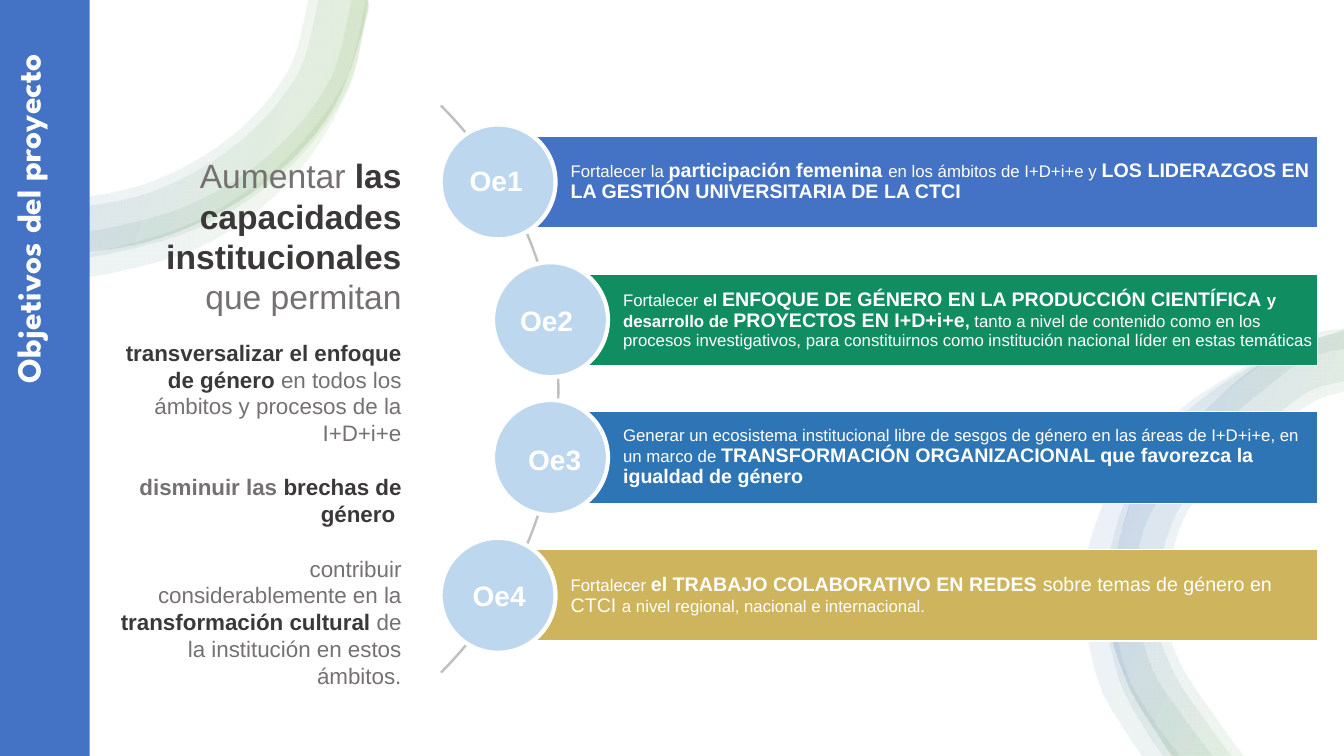
from dataclasses import dataclass

from pptx import Presentation
from pptx.dml.color import RGBColor
from pptx.enum.shapes import MSO_SHAPE
from pptx.enum.text import MSO_ANCHOR, PP_ALIGN
from pptx.oxml import parse_xml
from pptx.oxml.ns import nsdecls
from pptx.util import Inches, Pt

RECTANGLE, OVAL, BLOCK_ARC = MSO_SHAPE.RECTANGLE, MSO_SHAPE.OVAL, MSO_SHAPE.BLOCK_ARC
TOP, MIDDLE = MSO_ANCHOR.TOP, MSO_ANCHOR.MIDDLE
LEFT, RIGHT = PP_ALIGN.LEFT, PP_ALIGN.RIGHT


@dataclass(frozen=True)
class Theme:
    white: str = "FFFFFF"
    blue: str = "4472C4"
    green: str = "108D61"
    sky: str = "2E75B6"
    gold: str = "CDB45D"
    circle: str = "BDD7EE"
    arc: str = "BFBFBF"
    grey: str = "767171"
    dark: str = "3B3838"
    ribbon_green: str = "70AD47"
    body_font: str = "Arial"
    title_font: str = "League Spartan"
    title: int = 24
    lead: int = 24
    label: int = 20
    aim: int = 16
    large: int = 14
    small: int = 12


THEME = Theme()
Point = tuple[float, float]


@dataclass(frozen=True)
class Run:
    text: str
    size: int = THEME.small
    bold: bool = False
    color: str = THEME.white
    font: str = THEME.body_font


@dataclass(frozen=True)
class Paragraph:
    runs: list[Run]
    space_before: float = 0


@dataclass(frozen=True)
class Objective:
    label: str
    label_at: Point
    left: float
    color: str
    runs: list[Run]


@dataclass(frozen=True)
class Ribbon:
    outer: list[Point]
    inner: list[Point]


SMALL, LARGE, AIM = THEME.small, THEME.large, THEME.aim
GREY, DARK = THEME.grey, THEME.dark
SLIDE_WIDTH, SLIDE_HEIGHT = 13.33, 7.5
BAR_TOP, BAR_PITCH, BAR_HEIGHT, BAR_RIGHT = 1.35, 1.367, 0.91, 13.07
CIRCLE_SIZE, CIRCLE_SHIFT = 1.14, 0.57
RIBBON_ANGLE = 200

OBJECTIVES = [
    Objective("Oe1", (4.56, 1.57), 4.94, THEME.blue, [
        Run("Fortalecer la "), Run("participación femenina ", LARGE, True),
        Run("en los ámbitos de I+D+i+e y "),
        Run("LOS LIDERAZGOS EN LA GESTIÓN UNIVERSITARIA DE LA CTCI", LARGE, True)]),
    Objective("Oe2", (5.06, 2.96), 5.46, THEME.green, [
        Run("Fortalecer "), Run("el ", SMALL, True),
        Run("ENFOQUE DE GÉNERO EN LA PRODUCCIÓN CIENTÍFICA ", LARGE, True),
        Run("y desarrollo de ", SMALL, True), Run("PROYECTOS EN I+D+i+e", LARGE, True),
        Run(",", SMALL, True),
        Run(" tanto a nivel de contenido como en los procesos investigativos, para "
            "constituirnos como institución nacional líder en estas temáticas")]),
    Objective("Oe3", (5.14, 4.34), 5.46, THEME.sky, [
        Run("Generar un ecosistema institucional libre de sesgos de género en las áreas "
            "de I+D+i+e, en un marco de "),
        Run("TRANSFORMACIÓN ORGANIZACIONAL que favorezca la igualdad de género", LARGE, True)]),
    Objective("Oe4", (4.59, 5.69), 4.94, THEME.gold, [
        Run("Fortalecer "), Run("el TRABAJO COLABORATIVO EN REDES ", LARGE, True),
        Run("sobre temas de género en CTCI ", LARGE),
        Run("a nivel regional, nacional e internacional.")]),
]

AIMS = [
    Paragraph([Run("Aumentar ", THEME.lead, False, GREY),
               Run("las capacidades institucionales ", THEME.lead, True, DARK),
               Run("que permitan", THEME.lead, False, GREY)]),
    Paragraph([Run("transversalizar el enfoque de género ", AIM, True, DARK),
               Run("en todos los ámbitos y procesos de la I+D+i+e", AIM, False, GREY)], 16),
    Paragraph([Run("disminuir las ", AIM, True, GREY),
               Run("brechas de género ", AIM, True, DARK)], 19.5),
    Paragraph([Run("contribuir considerablemente en la ", AIM, False, GREY),
               Run("transformación cultural ", AIM, True, DARK),
               Run("de la institución en estos ámbitos.", AIM, False, GREY)], 19.5),
]

TOP_EDGE = [(3.64, 0), (3.63, 0.2), (3.28, 1.12), (2.57, 1.86), (1.62, 2.35), (0.56, 2.53), (0, 2.48)]
SIDE_EDGE = [(13.33, 3.3), (13.27, 3.3), (12.67, 3.52), (12.13, 3.91), (11.31, 4.78),
             (11.01, 5.98), (11.17, 6.74), (11.54, 7.37), (11.63, 7.5)]
RIBBONS = [
    Ribbon(TOP_EDGE, [(3.06, 0), (2.86, 0.7), (2.3, 1.35), (1.48, 1.81), (0.56, 1.98), (0, 1.9)]),
    Ribbon(TOP_EDGE, [(3.16, 0), (2.95, 0.74), (2.36, 1.42), (1.51, 1.9), (0.56, 2.07), (0, 2)]),
    Ribbon([(3.64, 0), (3.43, 0.9), (2.82, 1.7), (1.96, 2.26), (0.96, 2.54), (0.44, 2.55), (0, 2.49)],
           [(3.48, 0), (3.25, 0.82), (2.66, 1.54), (1.85, 2.04), (0.93, 2.29), (0.45, 2.31), (0, 2.25)]),
    Ribbon([(3.66, 0), (3.46, 0.88), (2.91, 1.76), (2.05, 2.42), (0.99, 2.73), (0.43, 2.73), (0, 2.64)],
           [(3.63, 0), (3.4, 0.85), (2.77, 1.64), (1.93, 2.2), (0.96, 2.5), (0.45, 2.53), (0, 2.47)]),
    Ribbon([(13.33, 3.26), (12.84, 3.35), (12.39, 3.61), (11.74, 4.03), (11.15, 4.6),
            (10.81, 5.37), (10.75, 6.04), (10.9, 6.78), (11.17, 7.27), (11.33, 7.5)],
           [(13.33, 3.29), (12.85, 3.39), (12.43, 3.67), (11.83, 4.16), (11.34, 4.74),
            (11.08, 5.43), (11.04, 6.03), (11.17, 6.66), (11.41, 7.1), (11.7, 7.5)]),
    Ribbon([(13.33, 3.3), (12.88, 3.38), (12.43, 3.62), (11.82, 4.04), (11.31, 4.63),
            (11.03, 5.39), (10.96, 6.02), (11.1, 6.73), (11.34, 7.2), (11.54, 7.5)],
           [(13.33, 3.46), (12.95, 3.56), (12.58, 3.83), (12.2, 4.15), (11.72, 4.64),
            (11.36, 5.22), (11.26, 5.86), (11.41, 6.58), (11.71, 7.07), (12.03, 7.5)]),
    Ribbon(SIDE_EDGE, [(13.33, 3.79), (13, 3.88), (12.63, 4.14), (12.39, 4.32), (11.69, 5.06),
                       (11.47, 5.98), (11.62, 6.62), (12.03, 7.25), (12.22, 7.5)]),
    Ribbon(SIDE_EDGE, [(13.33, 3.89), (13.05, 3.98), (12.68, 4.22), (12.44, 4.4), (11.78, 5.08),
                       (11.56, 5.98), (11.7, 6.56), (12.11, 7.19), (12.34, 7.5)]),
]


def curve_segments(points: list[Point]) -> list[tuple[Point, Point, Point]]:
    """Return the Bezier controls and end of each Catmull-Rom segment."""
    padded = [points[0], *points, points[-1]]
    return [(tuple(q + (r - p) / 6 for p, q, r in zip(a, b, c)),
             tuple(r - (s - q) / 6 for q, r, s in zip(b, c, d)), c)
            for a, b, c, d in zip(padded, padded[1:], padded[2:], padded[3:])]


def add_ribbon(slide, ribbon: Ribbon) -> None:
    inner = ribbon.inner[::-1]
    start, *others = [(Inches(x), Inches(y)) for x, y in ribbon.outer + inner]
    builder = slide.shapes.build_freeform(*start)
    builder.add_line_segments(others, close=True)
    shape = builder.convert_to_shape()
    shape.shadow.inherit = False
    shape.line.fill.background()
    shape.fill.background()
    properties = shape._element.spPr
    segments = [*curve_segments(ribbon.outer), None, *curve_segments(inner)]
    for line, segment in zip(list(properties.iter("{*}lnTo")), segments):
        if segment:
            points = "".join(f'<a:pt x="{Inches(x) - shape.left}" y="{Inches(y) - shape.top}"/>'
                             for x, y in segment)
            curve = parse_xml(f'<a:cubicBezTo {nsdecls("a")}>{points}</a:cubicBezTo>')
            line.getparent().replace(line, curve)
    colors = {2: THEME.white, 16: THEME.ribbon_green, 85: THEME.blue, 100: THEME.white}
    stops = "".join(f'<a:gs pos="{position * 1000}"><a:srgbClr val="{color}">'
                    '<a:alpha val="10000"/></a:srgbClr></a:gs>'
                    for position, color in colors.items())
    gradient = parse_xml(f'<a:gradFill {nsdecls("a")} rotWithShape="1"><a:gsLst>{stops}</a:gsLst>'
                         f'<a:lin ang="{RIBBON_ANGLE * 60000}" scaled="0"/></a:gradFill>')
    properties.replace(properties.find("{*}noFill"), gradient)


def add_filled_shape(slide, kind, box: tuple, color: str, line_width: float = 0):
    shape = slide.shapes.add_shape(kind, *map(Inches, box))
    shape.shadow.inherit = False
    shape.fill.solid()
    shape.fill.fore_color.rgb = RGBColor.from_string(color)
    if line_width:
        shape.line.color.rgb = RGBColor.from_string(THEME.white)
        shape.line.width = Pt(line_width)
    else:
        shape.line.fill.background()
    return shape


def write(shape, paragraphs: list[Paragraph], alignment=LEFT, anchor=TOP,
          margins: tuple = (0.1, 0.05, 0.1, 0.05), line_spacing: float = 1.0) -> None:
    frame = shape.text_frame
    left, top, right, bottom = map(Inches, margins)
    frame_format = {"word_wrap": True, "vertical_anchor": anchor, "margin_left": left,
                    "margin_top": top, "margin_right": right, "margin_bottom": bottom}
    for name, value in frame_format.items():
        setattr(frame, name, value)
    for index, content in enumerate(paragraphs):
        paragraph = frame.add_paragraph() if index else frame.paragraphs[0]
        paragraph.alignment = alignment
        paragraph.line_spacing = line_spacing
        if content.space_before:
            paragraph.space_before = Pt(content.space_before)
        for item in content.runs:
            run = paragraph.add_run()
            run.text = item.text
            run_format = {"name": item.font, "size": Pt(item.size), "bold": item.bold}
            for name, value in run_format.items():
                setattr(run.font, name, value)
            run.font.color.rgb = RGBColor.from_string(item.color)


def add_objective(slide, objective: Objective, top: float) -> None:
    left = objective.left
    bar = add_filled_shape(slide, RECTANGLE, (left, top, BAR_RIGHT - left, BAR_HEIGHT), objective.color, 1)
    write(bar, [Paragraph(objective.runs)], anchor=MIDDLE,
          margins=(0.72, 0.03, 0.03, 0.03), line_spacing=0.9)
    circle_top = top + (BAR_HEIGHT - CIRCLE_SIZE) / 2
    add_filled_shape(slide, OVAL, (left - CIRCLE_SHIFT, circle_top, CIRCLE_SIZE, CIRCLE_SIZE), THEME.circle, 3)
    label = slide.shapes.add_textbox(*map(Inches, (*objective.label_at, 0.87, 0.44)))
    write(label, [Paragraph([Run(objective.label, THEME.label, True)])])


def main() -> None:
    presentation = Presentation()
    presentation.slide_width, presentation.slide_height = Inches(SLIDE_WIDTH), Inches(SLIDE_HEIGHT)
    slide = presentation.slides.add_slide(presentation.slide_layouts[6])
    add_filled_shape(slide, RECTANGLE, (0, 0, SLIDE_WIDTH, SLIDE_HEIGHT), THEME.white)
    for ribbon in RIBBONS:
        add_ribbon(slide, ribbon)
    arc = add_filled_shape(slide, BLOCK_ARC, (-2.43, -0.13, 7.98, 7.98), THEME.arc)
    for index, value in enumerate((189, 27, 0.003)):
        arc.adjustments[index] = value
    for row, objective in enumerate(OBJECTIVES):
        add_objective(slide, objective, BAR_TOP + row * BAR_PITCH)
    aims = slide.shapes.add_textbox(*map(Inches, (1.09, 1.49, 2.99, 4.91)))
    write(aims, AIMS, alignment=RIGHT)
    sidebar = add_filled_shape(slide, RECTANGLE, (0, 0, 0.89, SLIDE_HEIGHT), THEME.blue)
    write(sidebar, [Paragraph([Run("Objetivos del proyecto", THEME.title, True, font=THEME.title_font)])],
          alignment=RIGHT, anchor=MIDDLE, margins=(0, 0.54, 0.35, 0))
    sidebar.text_frame._txBody.bodyPr.set("vert", "vert270")
    presentation.save("out.pptx")


if __name__ == "__main__":
    main()
